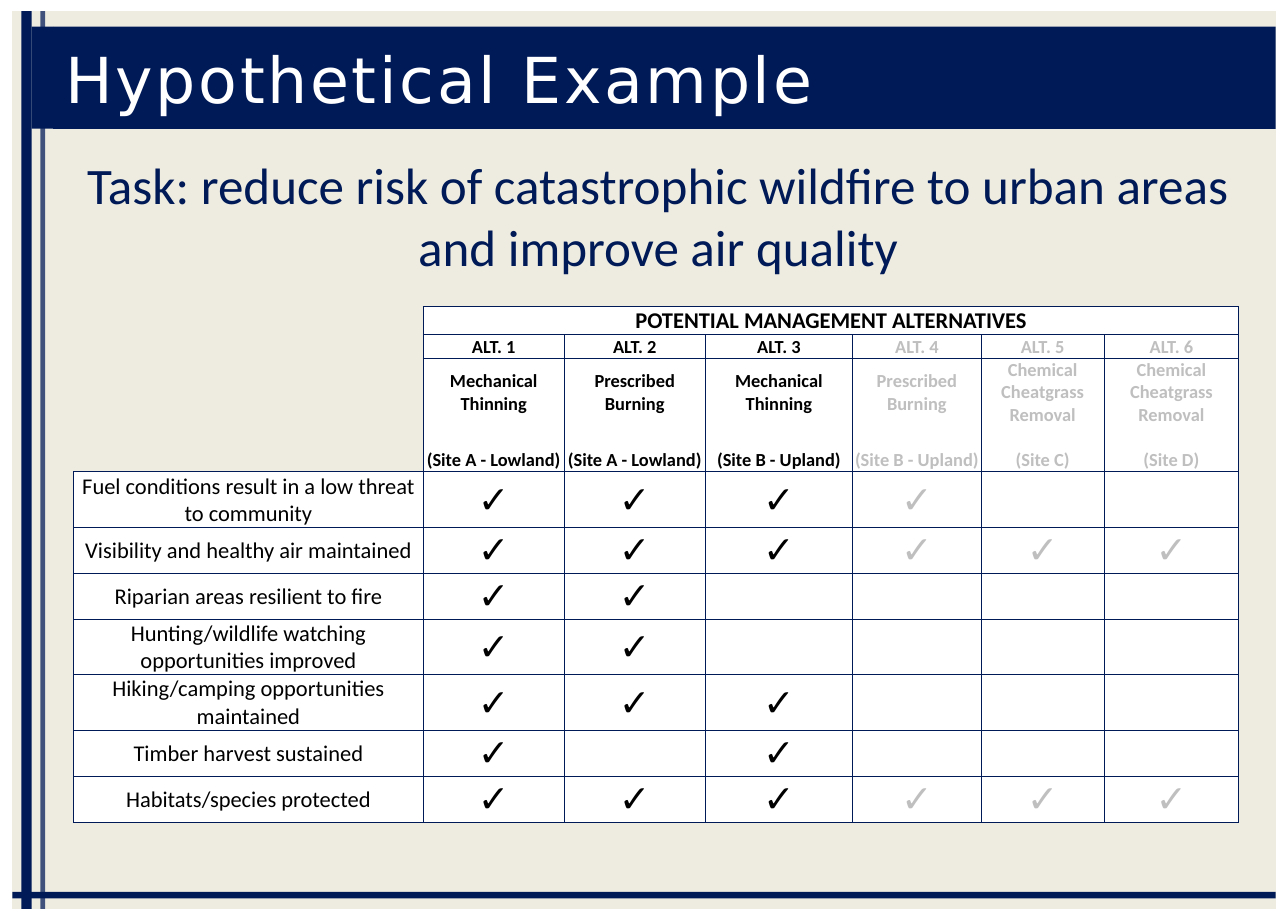
import pptx
import pptx.util
import pptx.dml.color
import pptx.enum.shapes
import pptx.enum.text
import pptx.oxml
import pptx.oxml.ns
import lxml.etree

Pt = pptx.util.Pt
ALIGN = pptx.enum.text.PP_ALIGN
ANCHOR = pptx.enum.text.MSO_ANCHOR
QN = pptx.oxml.ns.qn


def rgb(value):
    return pptx.dml.color.RGBColor.from_string(value)


class Board:
    """Draws styled elements on the current slide, with lengths in points."""

    navy, cream, white, black, grey = "001A57", "EEECE1", "FFFFFF", "000000", "BFBFBF"
    body, heading, symbol = "Calibri", "DejaVu Sans", "Arial"

    def __init__(self, slide):
        self.s = slide

    def set_text(self, tf, text, size, color, font=body, bold=False, align=ALIGN.CENTER):
        tf.text = text
        p = tf.paragraphs[0]
        p.alignment = align
        r = p.runs[0]
        r.font.name, r.font.size, r.font.bold = font, Pt(size), bold
        r.font.color.rgb = rgb(color)
        return r

    def frame(self, tf):
        tf.word_wrap = True
        tf.auto_size = pptx.enum.text.MSO_AUTO_SIZE.NONE
        tf.margin_left = tf.margin_right = Pt(12)
        tf.margin_top = tf.margin_bottom = Pt(6.5)

    def bar(self, left, top, width, height, color, line=None):
        sp = self.s.shapes.add_shape(pptx.enum.shapes.MSO_SHAPE.RECTANGLE,
                                     Pt(left), Pt(top), Pt(width), Pt(height))
        sp.shadow.inherit = False
        sp.fill.solid()
        sp.fill.fore_color.rgb = rgb(color)
        if line:
            sp.line.color.rgb = rgb(line)
            sp.line.width = Pt(1)
        else:
            sp.line.fill.background()

    def rule(self, x1, y1, x2, y2, width, opacity):
        c = self.s.shapes.add_connector(pptx.enum.shapes.MSO_CONNECTOR.STRAIGHT,
                                        Pt(x1), Pt(y1), Pt(x2), Pt(y2))
        c.line.color.rgb = rgb(self.navy)
        c.line.width = Pt(width)
        spPr = c._element.spPr
        clr = spPr.find(".//" + QN("a:srgbClr"))
        lxml.etree.SubElement(clr, QN("a:alpha"), val=str(opacity * 1000))
        lxml.etree.SubElement(spPr, QN("a:effectLst"))

    def title(self, text, left, top, width, height):
        sp = self.s.shapes.title
        sp.left, sp.top, sp.width, sp.height = Pt(left), Pt(top), Pt(width), Pt(height)
        sp.fill.solid()
        sp.fill.fore_color.rgb = rgb(self.navy)
        tf = sp.text_frame
        self.frame(tf)
        tf.vertical_anchor = ANCHOR.MIDDLE
        r = self.set_text(tf, text, 62, self.white, self.heading, align=ALIGN.LEFT)
        r._r.get_or_add_rPr().set("spc", "260")
        self.s.shapes._spTree.append(sp._element)

    def text(self, text, left, top, width, height, size):
        sp = self.s.shapes.add_textbox(Pt(left), Pt(top), Pt(width), Pt(height))
        self.frame(sp.text_frame)
        self.set_text(sp.text_frame, text, size, self.navy)

    def table(self, left, top, widths, heights):
        sp = self.s.shapes.add_table(len(heights), len(widths), Pt(left), Pt(top),
                                     Pt(sum(widths)), Pt(sum(heights)))
        table = sp.table
        table.first_row = table.horz_banding = False
        for column, width in zip(table.columns, widths):
            column.width = Pt(width)
        for row, height in zip(table.rows, heights):
            row.height = Pt(height)
        return table

    def cell(self, cell, fill, open_sides=""):
        cell.margin_left = cell.margin_right = cell.margin_top = Pt(0.72)
        cell.margin_bottom = 0
        cell.fill.solid()
        cell.fill.fore_color.rgb = rgb(fill)
        tcPr = cell._tc.get_or_add_tcPr()
        for i, side in enumerate("LRTB"):
            ln = lxml.etree.Element(QN("a:ln" + side), w=str(int(Pt(1))))
            if side in open_sides:
                lxml.etree.SubElement(ln, QN("a:noFill"))
            else:
                paint = lxml.etree.SubElement(ln, QN("a:solidFill"))
                lxml.etree.SubElement(paint, QN("a:srgbClr"), val=self.navy)
            tcPr.insert(i, ln)

    def cell_text(self, cell, text, size, color, font=body, bold=False, anchor=ANCHOR.MIDDLE):
        cell.vertical_anchor = anchor
        self.set_text(cell.text_frame, text, size, color, font, bold)


ALTERNATIVES = [
    ("ALT. 1", "Mechanical Thinning", "(Site A - Lowland)"),
    ("ALT. 2", "Prescribed Burning", "(Site A - Lowland)"),
    ("ALT. 3", "Mechanical Thinning", "(Site B - Upland)"),
    ("ALT. 4", "Prescribed Burning", "(Site B - Upland)"),
    ("ALT. 5", "Chemical Cheatgrass Removal", "(Site C)"),
    ("ALT. 6", "Chemical Cheatgrass Removal", "(Site D)"),
]
OBJECTIVES = [
    ("Fuel conditions result in a low threat to community", [1, 2, 3, 4]),
    ("Visibility and healthy air maintained", [1, 2, 3, 4, 5, 6]),
    ("Riparian areas resilient to fire", [1, 2]),
    ("Hunting/wildlife watching opportunities improved", [1, 2]),
    ("Hiking/camping opportunities maintained", [1, 2, 3]),
    ("Timber harvest sustained", [1, 3]),
    ("Habitats/species protected", [1, 2, 3, 4, 5, 6]),
]
WIDTHS = [342, 138, 138, 144, 126, 120, 132]
HEIGHTS = [27.5, 22.5, 67, 44.5, 54, 45, 45, 54, 54, 45, 45]
HEADER_ROWS = 4


def fill_table(board):
    table = board.table(72, 300, WIDTHS, HEIGHTS)
    open_sides = {2: "B", 3: "T"}
    for row in range(len(HEIGHTS)):
        for col in range(len(WIDTHS)):
            corner = row < HEADER_ROWS and col == 0
            sides = ("LT" if row == 0 else "L") if corner else open_sides.get(row, "")
            board.cell(table.cell(row, col), board.cream if corner else board.white, sides)
    table.cell(0, 0).merge(table.cell(HEADER_ROWS - 1, 0))
    table.cell(0, 1).merge(table.cell(0, len(ALTERNATIVES)))
    board.cell_text(table.cell(0, 1), "POTENTIAL MANAGEMENT ALTERNATIVES", 22, board.black,
                    bold=True, anchor=ANCHOR.BOTTOM)
    colors = [board.black] * 4 + [board.grey] * 3
    for col, labels in enumerate(ALTERNATIVES, 1):
        for row, label in enumerate(labels, 1):
            anchor = ANCHOR.MIDDLE if row == 2 else ANCHOR.BOTTOM
            board.cell_text(table.cell(row, col), label, 18, colors[col], bold=True, anchor=anchor)
    for row, (objective, met) in enumerate(OBJECTIVES, HEADER_ROWS):
        board.cell_text(table.cell(row, 0), objective, 22, board.black)
        for col in met:
            board.cell_text(table.cell(row, col), "✓", 37, colors[col], board.symbol)


def main():
    prs = pptx.Presentation()
    prs.slide_width, prs.slide_height = Pt(1260), Pt(900)
    board = Board(prs.slides.add_slide(prs.slide_layouts[5]))
    board.bar(12, 10.8, 1236, 878.4, board.cream, board.cream)
    board.bar(21, 10.8, 10, 878.4, board.navy)
    board.bar(31, 26, 21, 100, board.navy)
    board.bar(12, 872.5, 1236, 6.5, board.navy)
    board.rule(41.8, 889.2, 41.8, 10.8, 4.5, 73)
    board.title("Hypothetical Example", 52, 26, 1196, 100)
    fill_table(board)
    board.text("Task: reduce risk of catastrophic wildfire to urban areas and improve air quality",
               52, 144, 1184, 138, 50)
    prs.save("out.pptx")


if __name__ == "__main__":
    main()
